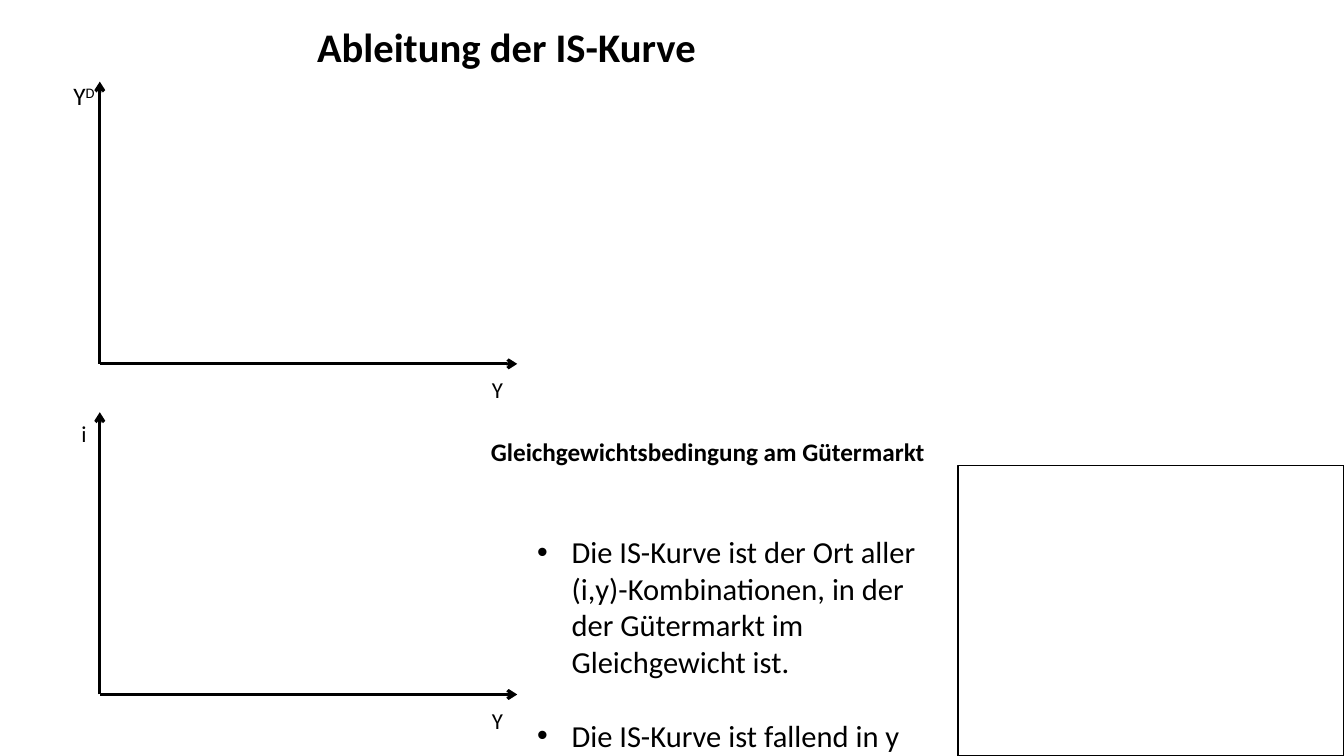
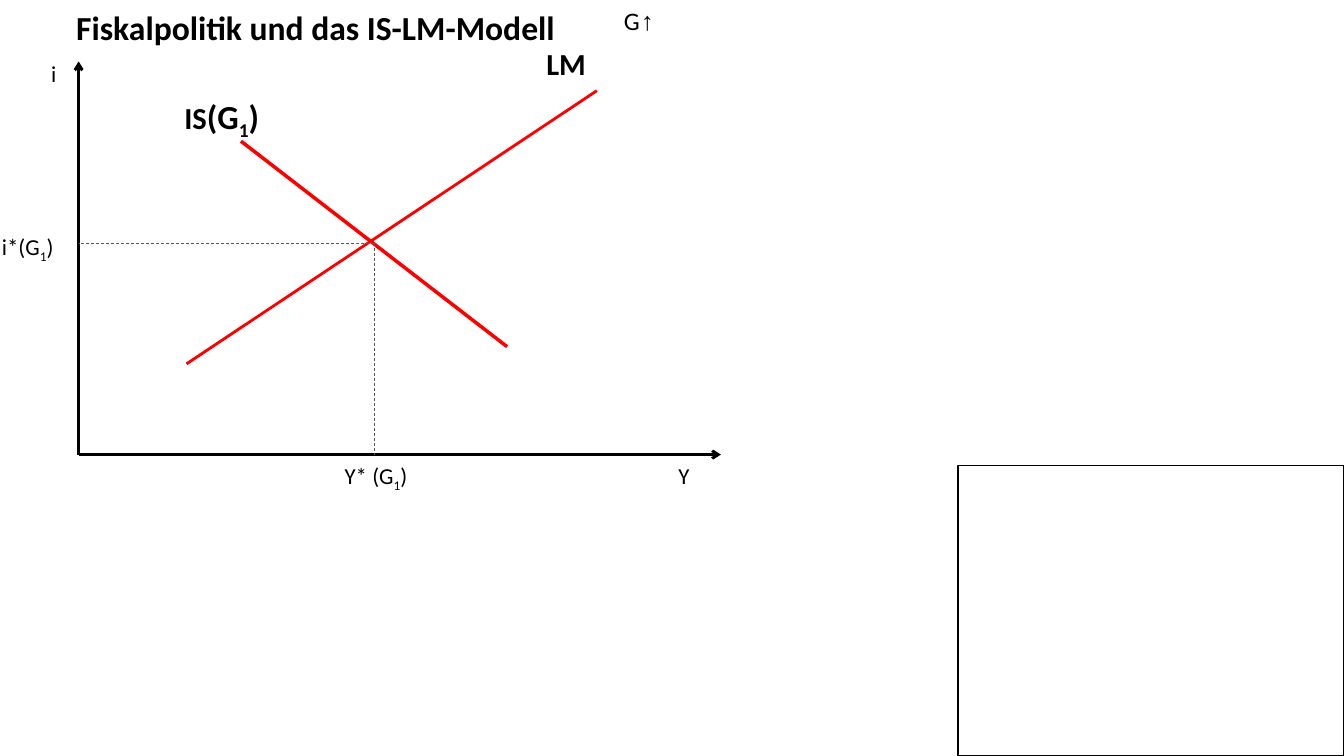
"""Build two slides on the IS curve and fiscal policy in the IS-LM model."""
from dataclasses import dataclass
from typing import Optional

from lxml import etree
from pptx import Presentation
from pptx import util as u
from pptx.dml.color import RGBColor
from pptx.enum import dml, shapes, text
from pptx.oxml import ns
from pptx.slide import Slide
from pptx.text.text import TextFrame, _Paragraph


@dataclass(frozen=True)
class Theme:
    """Colours, fonts, type sizes in points and the grid cell in inches."""
    ink: RGBColor = RGBColor(0, 0, 0)
    curve: RGBColor = RGBColor(255, 0, 0)
    guide: RGBColor = RGBColor(0x59, 0x59, 0x59)
    font: str = "Calibri"
    symbol_font: str = "Noto Sans Mono"
    title: float = 29
    small_title: float = 24
    body: float = 21.8
    heading: float = 18
    label: float = 16.3
    cell: float = 0.1
    columns: float = 133.3
    rows: float = 75


THEME = Theme()


@dataclass(frozen=True)
class Box:
    """Area in grid columns and rows."""
    left: float
    top: float
    width: float
    height: float


@dataclass(frozen=True)
class Piece:
    """Run of text with its own size, weight and baseline shift in percent."""
    words: str
    size: float = THEME.label
    bold: bool = False
    baseline: int = 0
    font: str = THEME.font


@dataclass(frozen=True)
class Label:
    """Text of one or more runs on one line."""
    box: Box
    pieces: tuple[Piece, ...]


@dataclass(frozen=True)
class Stroke:
    """Straight line between two grid points."""
    start: tuple[float, float]
    end: tuple[float, float]
    width: float
    colour: RGBColor = THEME.ink
    arrow: bool = False
    dashed: bool = False


@dataclass(frozen=True)
class Axes:
    """Pair of arrows rising and running from one origin."""
    column: float
    row: float
    width: float
    height: float
    weight: float


SIDE_PANEL = Box(95, 46.2, THEME.columns - 95, THEME.rows - 46.2)
GRAPH_STEP = 32.8


def grid(cells: float) -> u.Length:
    """Turn grid cells into a length."""
    return u.Inches(cells * THEME.cell)


def add_pieces(paragraph: _Paragraph, pieces: tuple[Piece, ...]) -> None:
    """Add each piece as a run."""
    for piece in pieces:
        run = paragraph.add_run()
        run.text = piece.words
        run.font.name = piece.font
        run.font.size = u.Pt(piece.size)
        run.font.bold = piece.bold
        run.font.color.rgb = THEME.ink
        if piece.baseline:
            run._r.get_or_add_rPr().set("baseline", str(piece.baseline * 1000))


def add_frame(slide: Slide, box: Box, wrap: bool) -> TextFrame:
    """Add a text box and return its frame."""
    shape = slide.shapes.add_textbox(
        grid(box.left), grid(box.top), grid(box.width), grid(box.height))
    shape.text_frame.word_wrap = wrap
    return shape.text_frame


def add_label(slide: Slide, label: Label) -> None:
    """Add a one-line label that fits its text."""
    frame = add_frame(slide, label.box, wrap=False)
    frame.auto_size = text.MSO_AUTO_SIZE.SHAPE_TO_FIT_TEXT
    add_pieces(frame.paragraphs[0], label.pieces)


def add_title(slide: Slide, box: Box, words: str, size: float) -> None:
    """Add a centred bold title."""
    frame = add_frame(slide, box, wrap=True)
    frame.vertical_anchor = text.MSO_ANCHOR.MIDDLE
    frame.margin_top = frame.margin_bottom = u.Inches(0.04)
    frame.paragraphs[0].alignment = text.PP_ALIGN.CENTER
    add_pieces(frame.paragraphs[0], (Piece(words, size, bold=True),))


def add_bullets(slide: Slide, box: Box, items: tuple[str, ...], gap: float) -> None:
    """Add a bulleted list with a gap in points between items."""
    frame = add_frame(slide, box, wrap=True)
    for index, item in enumerate(items):
        paragraph = frame.add_paragraph() if index else frame.paragraphs[0]
        properties = paragraph._p.get_or_add_pPr()
        properties.set("marL", str(grid(3.4)))
        properties.set("indent", str(-grid(3.4)))
        bullet_font = etree.SubElement(properties, ns.qn("a:buFont"))
        bullet_font.set("typeface", "Arial")
        etree.SubElement(properties, ns.qn("a:buChar")).set("char", "•")
        if index:
            paragraph.space_before = u.Pt(gap)
        add_pieces(paragraph, (Piece(item, THEME.body),))


def add_stroke(slide: Slide, stroke: Stroke) -> None:
    """Draw a straight line, dashed or with an arrowhead if asked."""
    points = (grid(value) for value in (*stroke.start, *stroke.end))
    connector = slide.shapes.add_connector(shapes.MSO_CONNECTOR.STRAIGHT, *points)
    connector.line.width = u.Pt(stroke.width)
    connector.line.color.rgb = stroke.colour
    if stroke.dashed:
        connector.line.dash_style = dml.MSO_LINE.DASH
    properties = connector._element.spPr
    if stroke.arrow:
        line = properties.find(ns.qn("a:ln"))
        etree.SubElement(line, ns.qn("a:tailEnd")).set("type", "arrow")
    etree.SubElement(properties, ns.qn("a:effectLst"))


def add_axes(slide: Slide, axes: Axes) -> None:
    """Draw the vertical and the horizontal axis."""
    origin = (axes.column, axes.row)
    tips = ((axes.column, axes.row - axes.height), (axes.column + axes.width, axes.row))
    for tip in tips:
        add_stroke(slide, Stroke(origin, tip, axes.weight, arrow=True))


def add_panel(slide: Slide, box: Box, outline: Optional[float] = 1) -> None:
    """Add the empty outlined panel in the lower right corner."""
    panel = slide.shapes.add_shape(
        shapes.MSO_SHAPE.RECTANGLE,
        grid(box.left), grid(box.top), grid(box.width), grid(box.height))
    panel.shadow.inherit = False
    panel.fill.background()
    panel.line.color.rgb = THEME.ink
    panel.line.width = u.Pt(outline)


def indexed(words: str) -> tuple[Piece, ...]:
    """Return a label ending in G with the index 1 in brackets."""
    return Piece(f"{words}(G"), Piece("1", baseline=-25), Piece(")")


def build_derivation(slide: Slide) -> None:
    """Draw the slide deriving the IS curve."""
    add_title(slide, Box(8.7, 0.5, 83.1, 8.1), "Ableitung der IS-Kurve", THEME.title)
    for graph in range(2):
        shift = graph * GRAPH_STEP
        add_axes(slide, Axes(9.9, 36.1 + shift, 41.4, 28, 2.25))
        add_label(slide, Label(Box(47.8, 36.8 + shift, 3.1, 3.8), (Piece("Y"),)))
    labels = (
        Label(Box(6.3, 7.5, 4.3, 4),
              (Piece("Y", THEME.heading), Piece("D", THEME.heading, baseline=30))),
        Label(Box(7.1, 41.1, 2.5, 3.8), (Piece("i"),)),
        Label(Box(47.7, 42.8, 45.5, 4),
              (Piece("Gleichgewichtsbedingung am Gütermarkt", THEME.heading, True),)),
    )
    for label in labels:
        add_label(slide, label)
    add_bullets(slide, Box(52.3, 52.4, 41.1, 15.8), (
        "Die IS-Kurve ist der Ort aller (i,y)-Kombinationen, "
        "in der der Gütermarkt im Gleichgewicht ist.",
        "Die IS-Kurve ist fallend in y",
    ), gap=26.5)
    add_panel(slide, SIDE_PANEL)


def build_fiscal_policy(slide: Slide) -> None:
    """Draw the slide on fiscal policy in the IS-LM model."""
    axes = Axes(7.8, 45.1, 63.7, 39, 2)
    equilibrium = (37.1, 24.1)
    add_title(slide, Box(5.7, -0.3, 51.2, 5.9),
              "Fiskalpolitik und das IS-LM-Modell", THEME.small_title)
    add_axes(slide, axes)
    strokes = (
        Stroke((18.5, 36.1), (59.2, 9), 2, THEME.curve),
        Stroke((23.9, 14), (50.3, 34.4), 2.5, THEME.curve),
        Stroke(equilibrium, (axes.column, equilibrium[1]), 0.5, THEME.guide, dashed=True),
        Stroke(equilibrium, (equilibrium[0], axes.row), 0.5, THEME.guide, dashed=True),
    )
    for stroke in strokes:
        add_stroke(slide, stroke)
    labels = (
        Label(Box(4.1, 5.4, 2.5, 3.8), (Piece("i"),)),
        Label(Box(66.3, 45.3, 3.1, 3.8), (Piece("Y"),)),
        Label(Box(17.3, 9, 9.6, 5), (
            Piece("IS", THEME.body, True), Piece("(G", THEME.small_title, True),
            Piece("1", THEME.small_title, True, -25), Piece(")", THEME.small_title, True))),
        Label(Box(53.2, 4, 6, 4.7), (Piece("LM", THEME.body, True),)),
        Label(Box(33.2, 45.3, 8.4, 3.8), indexed("Y* ")),
        Label(Box(-0.8, 22.6, 7.3, 3.8), indexed("i*")),
        Label(Box(60.9, 0, 5.3, 4), (
            Piece("G", THEME.heading),
            Piece("↑", THEME.heading, font=THEME.symbol_font))),
    )
    for label in labels:
        add_label(slide, label)
    add_panel(slide, SIDE_PANEL)


def main() -> None:
    """Build and save the presentation."""
    presentation = Presentation()
    presentation.slide_width = grid(THEME.columns)
    presentation.slide_height = grid(THEME.rows)
    blank = presentation.slide_layouts[6]
    for build in (build_derivation, build_fiscal_policy):
        build(presentation.slides.add_slide(blank))
    presentation.save("out.pptx")


if __name__ == "__main__":
    main()
